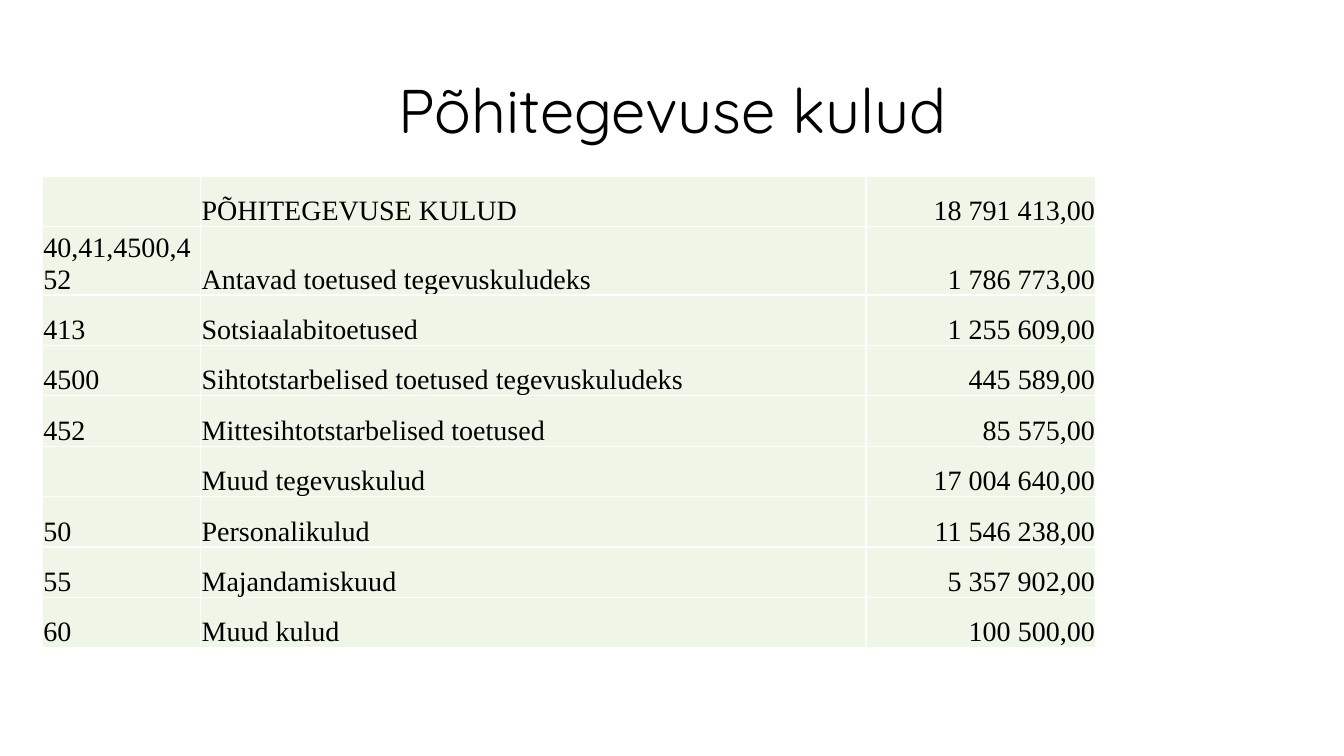
"""Build the slide listing the main operating expenses."""
from dataclasses import dataclass

import lxml.etree
import pptx
import pptx.dml.color
import pptx.enum.text
import pptx.oxml.ns
import pptx.presentation
import pptx.slide
import pptx.table
import pptx.text.text
import pptx.util

Inches = pptx.util.Inches
Align = pptx.enum.text.PP_ALIGN
Anchor = pptx.enum.text.MSO_ANCHOR

COLOURS = {"text": "000000", "cell": "EFF6E8", "border": "FFFFFF"}
COLUMN_WIDTHS = (1.57, 6.6, 2.28)
COLUMN_ALIGNMENTS = (Align.LEFT, Align.LEFT, Align.RIGHT)
ROW_HEIGHT = 0.5


@dataclass(frozen=True)
class Expense:
    code: str
    name: str
    amount: str


EXPENSES = (
    Expense("", "PÕHITEGEVUSE KULUD", "18 791 413,00"),
    Expense("40,41,4500,452", "Antavad toetused tegevuskuludeks", "1 786 773,00"),
    Expense("413", "Sotsiaalabitoetused", "1 255 609,00"),
    Expense("4500", "Sihtotstarbelised toetused tegevuskuludeks", "445 589,00"),
    Expense("452", "Mittesihtotstarbelised toetused", "85 575,00"),
    Expense("", "Muud tegevuskulud", "17 004 640,00"),
    Expense("50", "Personalikulud", "11 546 238,00"),
    Expense("55", "Majandamiskuud", "5 357 902,00"),
    Expense("60", "Muud kulud", "100 500,00"),
)


def rgb(name: str) -> pptx.dml.color.RGBColor:
    return pptx.dml.color.RGBColor.from_string(COLOURS[name])


def format_text(paragraph: pptx.text.text._Paragraph, font: str, size: int,
                alignment: Align) -> None:
    paragraph.alignment = alignment
    for run in paragraph.runs:
        run.font.name = font
        run.font.size = pptx.util.Pt(size)
        run.font.color.rgb = rgb("text")


def add_borders(cell: pptx.table._Cell) -> None:
    properties = cell._tc.get_or_add_tcPr()
    qn = pptx.oxml.ns.qn
    for side in ("lnL", "lnR", "lnT", "lnB"):
        line = lxml.etree.SubElement(properties, qn(f"a:{side}"), w=str(pptx.util.Pt(1)))
        fill = lxml.etree.SubElement(line, qn("a:solidFill"))
        lxml.etree.SubElement(fill, qn("a:srgbClr"), val=COLOURS["border"])


def fill_cell(cell: pptx.table._Cell, text: str, alignment: Align) -> None:
    add_borders(cell)
    cell.fill.solid()
    cell.fill.fore_color.rgb = rgb("cell")
    cell.vertical_anchor = Anchor.BOTTOM
    cell.margin_left = cell.margin_right = cell.margin_top = Inches(0.01)
    cell.margin_bottom = 0
    if text:
        cell.text_frame.text = text
        format_text(cell.text_frame.paragraphs[0], "Times New Roman", 20, alignment)


def add_title(slide: pptx.slide.Slide, text: str) -> None:
    title = slide.shapes.add_textbox(Inches(0.92), Inches(0.4), Inches(11.5), Inches(1.45))
    frame = title.text_frame
    frame.word_wrap = True
    frame.vertical_anchor = Anchor.MIDDLE
    frame.text = text
    frame.paragraphs[0].line_spacing = 0.9
    format_text(frame.paragraphs[0], "Quicksand", 44, Align.CENTER)


def add_expense_table(slide: pptx.slide.Slide) -> None:
    table = slide.shapes.add_table(
        len(EXPENSES), len(COLUMN_WIDTHS), Inches(0.42), Inches(1.75),
        Inches(sum(COLUMN_WIDTHS)), Inches(ROW_HEIGHT * len(EXPENSES))).table
    table.first_row = False
    table.horz_banding = False
    for column, width in zip(table.columns, COLUMN_WIDTHS):
        column.width = Inches(width)
    for row, expense in zip(table.rows, EXPENSES):
        row.height = Inches(ROW_HEIGHT)
        texts = (expense.code, expense.name, expense.amount)
        for cell, text, alignment in zip(row.cells, texts, COLUMN_ALIGNMENTS):
            fill_cell(cell, text, alignment)


def main() -> None:
    presentation = pptx.Presentation()
    presentation.slide_width = Inches(13.33)
    presentation.slide_height = Inches(7.5)
    slide = presentation.slides.add_slide(presentation.slide_layouts[6])
    add_title(slide, "Põhitegevuse kulud")
    add_expense_table(slide)
    presentation.save("out.pptx")


if __name__ == "__main__":
    main()
